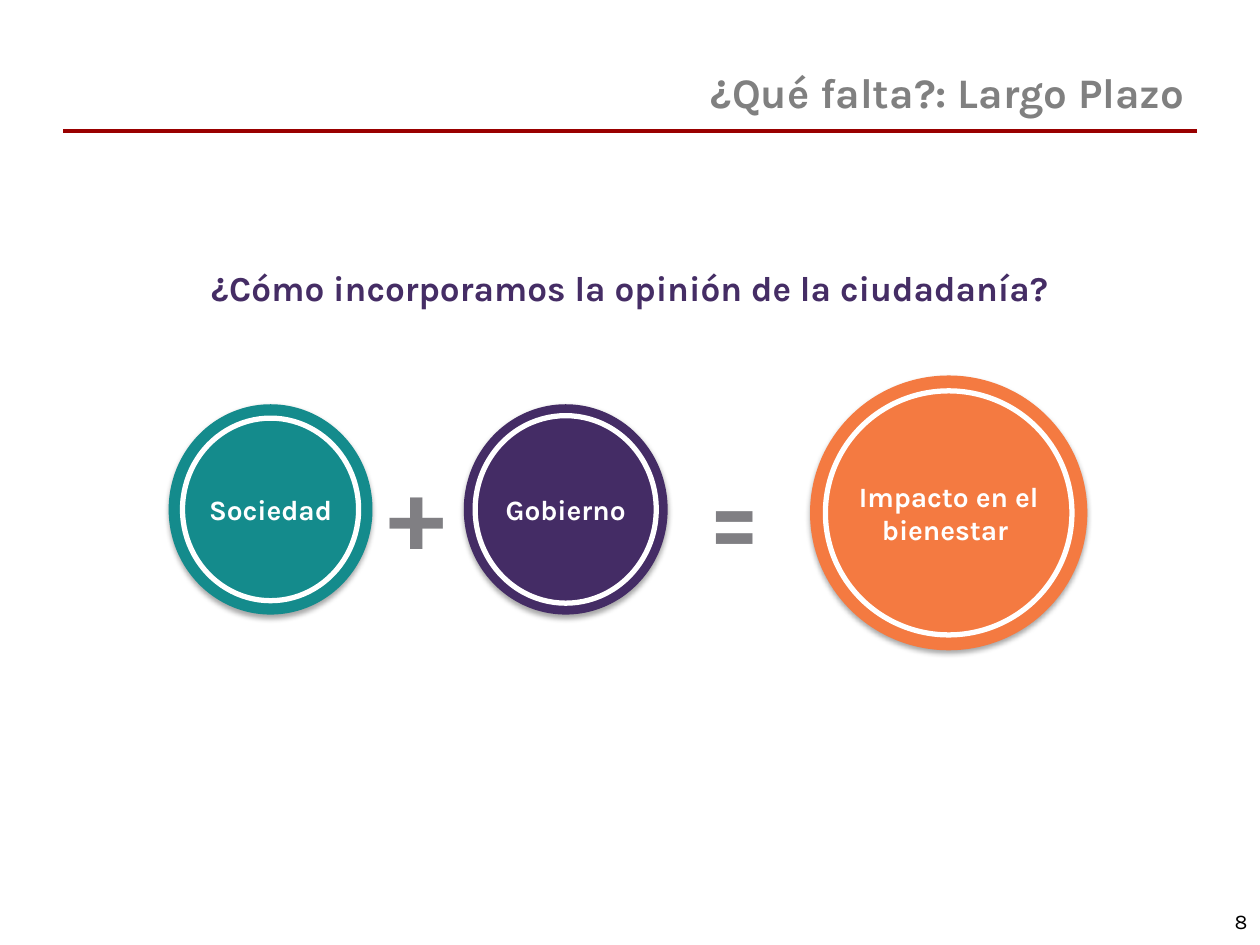
from lxml.etree import SubElement
from pptx import Presentation
from pptx.dml.color import RGBColor
from pptx.enum.shapes import MSO_CONNECTOR as Connector, MSO_SHAPE as Shape
from pptx.enum.text import MSO_ANCHOR as Anchor, PP_ALIGN as Align
from pptx.oxml.ns import qn
from pptx.util import Cm, Pt

FONT = "Karla"
GRAY, PURPLE, SYMBOL_GRAY, WHITE = "808080", "452D65", "807F83", "FFFFFF"
MARGIN, CONTENT_WIDTH, RULE_Y = 1.27, 22.86, 2.64

TITLE = "¿Qué falta?: Largo Plazo"
TEXTS = [
    ("8", (19.48, 18.06, 5.92, 1.02),
     dict(size=12, color="000000", bold=False, align=Align.RIGHT)),
    ("¿Cómo incorporamos la opinión de la ciudadanía?",
     (MARGIN, 4.55, CONTENT_WIDTH, 2.51), dict(size=20, color=PURPLE)),
    ("+", (7.19, 8.89, 2.41, 2.69), dict(size=60, color=SYMBOL_GRAY)),
    ("=", (13.61, 8.99, 2.41, 2.69), dict(size=60, color=SYMBOL_GRAY)),
]
CIRCLES = [
    ("Gobierno", (9.35, 8.15, 4.11, 4.24), 0.23, "442C65"),
    ("Impacto en el bienestar ", (16.33, 7.57, 5.59, 5.54), 0.31, "F47A41"),
    ("Sociedad", (3.4, 8.15, 4.11, 4.24), 0.28, "148B8C"),
]


def rgb(color):
    return RGBColor.from_string(color)


def lengths(box):
    return [Cm(value) for value in box]


def write(shape, text, size=16, color=WHITE, bold=True, align=Align.CENTER, inset=None):
    frame = shape.text_frame
    frame.word_wrap = True
    frame.vertical_anchor = Anchor.MIDDLE
    if inset is not None:
        frame.margin_left = frame.margin_right = Cm(inset)
        frame.margin_top = frame.margin_bottom = Cm(inset)
    paragraph = frame.paragraphs[0]
    paragraph.alignment = align
    run = paragraph.add_run()
    run.text = text
    run.font.name = FONT
    run.font.size = Pt(size)
    run.font.bold = bold
    run.font.color.rgb = rgb(color)


def add_shadow(shape):
    effects = SubElement(shape._element.spPr, qn("a:effectLst"))
    shadow = SubElement(effects, qn("a:outerShdw"), blurRad=str(Pt(3.1)),
                        dist=str(Pt(1.8)), dir="5400000", rotWithShape="0")
    shade = SubElement(shadow, qn("a:srgbClr"), val="000000")
    SubElement(shade, qn("a:alpha"), val="35000")


def add_circle(slide, text, box, inset, color):
    group = slide.shapes.add_group_shape()
    disc = group.shapes.add_shape(Shape.OVAL, *lengths(box))
    disc.fill.solid()
    disc.fill.fore_color.rgb = rgb(color)
    disc.line.fill.background()
    add_shadow(disc)
    write(disc, text, inset=0)

    left, top, width, height = box
    ring_box = (left + inset, top + inset, width - 2 * inset, height - 2 * inset)
    ring = group.shapes.add_shape(Shape.OVAL, *lengths(ring_box))
    ring.shadow.inherit = False
    ring.fill.background()
    ring.line.color.rgb = rgb(WHITE)
    ring.line.width = Pt(3)


def main():
    deck = Presentation()
    deck.slide_width, deck.slide_height = Cm(25.4), Cm(19.05)
    slide = deck.slides.add_slide(deck.slide_layouts[5])

    title = slide.shapes.title
    title.left, title.top, title.width, title.height = lengths(
        (MARGIN, 1.07, CONTENT_WIDTH, 1.55))
    write(title, TITLE, size=24, color=GRAY, align=Align.RIGHT)

    rule = slide.shapes.add_connector(
        Connector.STRAIGHT, *lengths((MARGIN + CONTENT_WIDTH, RULE_Y, MARGIN, RULE_Y)))
    rule.line.color.rgb = rgb("990000")
    rule.line.width = Pt(2)
    SubElement(rule._element.spPr, qn("a:effectLst"))

    for text, box, style in TEXTS:
        write(slide.shapes.add_textbox(*lengths(box)), text, **style)
    for circle in CIRCLES:
        add_circle(slide, *circle)

    deck.save("out.pptx")


if __name__ == "__main__":
    main()
